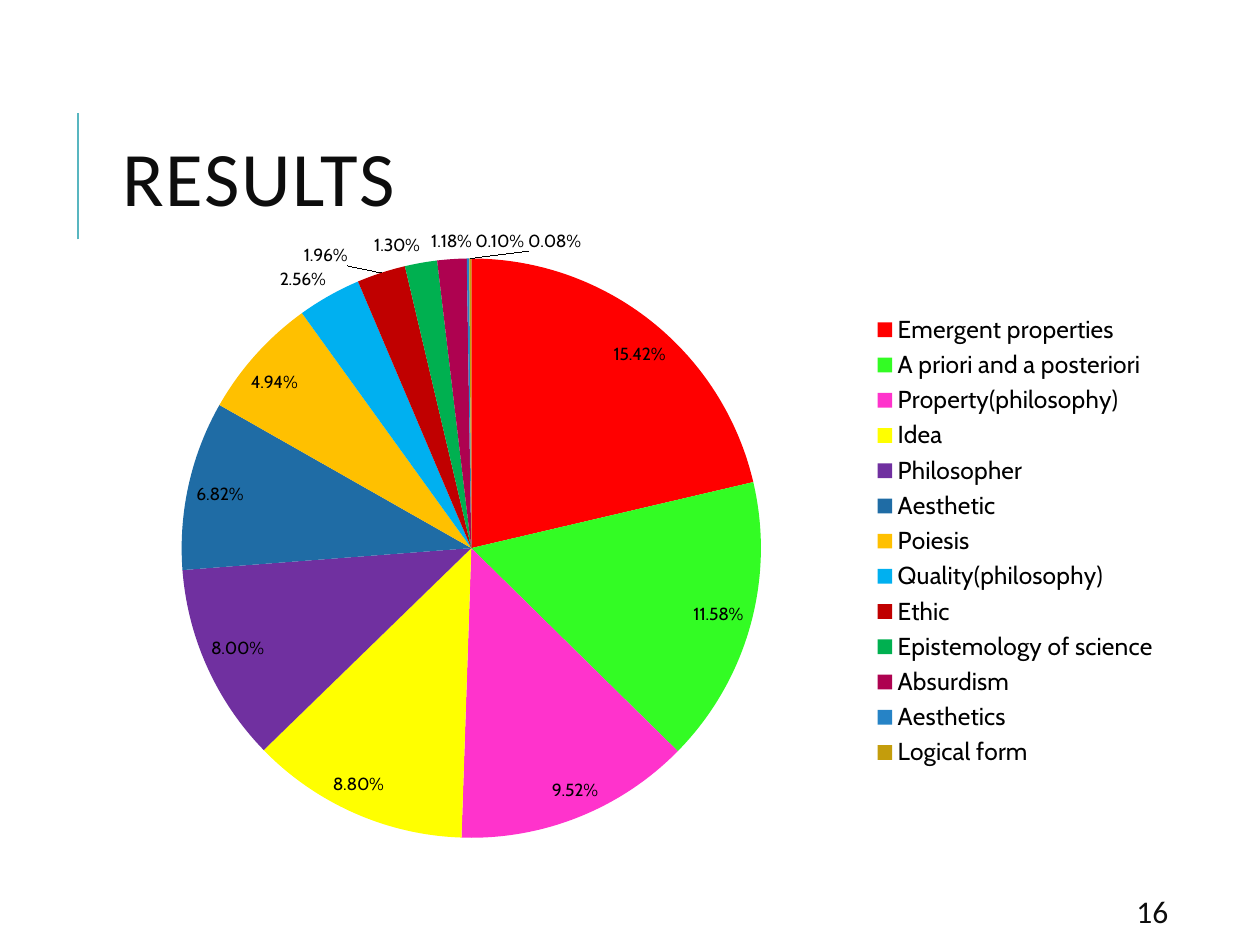
from lxml import etree
from pptx import Presentation
from pptx.chart.data import CategoryChartData
from pptx.dml.color import RGBColor
from pptx.enum.chart import XL_CHART_TYPE, XL_LABEL_POSITION, XL_LEGEND_POSITION
from pptx.enum.shapes import MSO_CONNECTOR
from pptx.enum.text import MSO_ANCHOR
from pptx.oxml.ns import qn
from pptx.util import Inches, Pt

PIE = XL_CHART_TYPE.PIE
BEST_FIT = XL_LABEL_POSITION.BEST_FIT
LEGEND_RIGHT = XL_LEGEND_POSITION.RIGHT
STRAIGHT = MSO_CONNECTOR.STRAIGHT
MIDDLE = MSO_ANCHOR.MIDDLE

SLICES = [
    ("Emergent properties", 0.1542, "FF0000"),
    ("A priori and a posteriori", 0.1158, "33FC24"),
    ("Property(philosophy)", 0.0952, "FF33CC"),
    ("Idea", 0.088, "FFFF00"),
    ("Philosopher", 0.08, "7030A0"),
    ("Aesthetic", 0.0682, "1F6CA5"),
    ("Poiesis", 0.0494, "FFC000"),
    ("Quality(philosophy)", 0.0256, "00B0F0"),
    ("Ethic", 0.0196, "C00000"),
    ("Epistemology of science", 0.013, "00B050"),
    ("Absurdism", 0.0118, "AE0250"),
    ("Aesthetics", 0.001, "2683C6"),
    ("Logical form", 0.0008, "C49D0C"),
]
LABEL_OFFSETS = {"Ethic": (-0.03, 0), "Aesthetics": (0.03, 0), "Logical form": (0.08, 0)}


def color(hex_string):
    """Return the colour for a hex string."""
    return RGBColor.from_string(hex_string)


def make_layout(**values):
    """Return a manual chart layout element."""
    layout = etree.Element(qn("c:layout"))
    manual = etree.SubElement(layout, qn("c:manualLayout"))
    for name, value in values.items():
        etree.SubElement(manual, qn(f"c:{name}")).set("val", str(value))
    return layout


def add_text(slide, box, text, size, letter_spacing=0, line_spacing=1.0):
    """Place one line of text, vertically centred in its box."""
    text_frame = slide.shapes.add_textbox(*map(Inches, box)).text_frame
    text_frame.text = text
    text_frame.word_wrap = True
    text_frame.vertical_anchor = MIDDLE
    text_frame.margin_left = text_frame.margin_right = Inches(0.13)
    text_frame.margin_top = text_frame.margin_bottom = Inches(0.07)
    paragraph = text_frame.paragraphs[0]
    paragraph.line_spacing = line_spacing
    run = paragraph.runs[0]
    run.font.name = "Calibri"
    run.font.size = Pt(size)
    run.font.color.rgb = color("0D0D0D")
    if letter_spacing:
        run.font._element.set("spc", str(letter_spacing * 100))


def add_accent_line(slide, x, top, height):
    """Draw the vertical accent beside the title."""
    line = slide.shapes.add_connector(
        STRAIGHT, Inches(x), Inches(top + height), Inches(x), Inches(top)
    )
    line.line.color.rgb = color("58B6C0")
    line.line.width = Pt(1.5)
    etree.SubElement(line._element.spPr, qn("a:effectLst"))


def format_font(font, size):
    """Apply the chart typeface, size and colour."""
    font.name = "Cabin"
    font.size = Pt(size)
    font.color.rgb = color("000000")


def add_results_pie(slide, box):
    """Place the pie chart with its labels and legend."""
    chart_data = CategoryChartData(number_format="0.00%")
    chart_data.categories = [name for name, _, _ in SLICES]
    chart_data.add_series("Series 1", [value for _, value, _ in SLICES])
    chart = slide.shapes.add_chart(PIE, *map(Inches, box), chart_data).chart
    chart.has_title = False
    format_font(chart.font, 10)
    chart.has_legend = True
    chart.legend.position = LEGEND_RIGHT
    chart.legend.include_in_layout = False
    format_font(chart.legend.font, 14)

    plot = chart.plots[0]
    plot.vary_by_categories = True
    series = plot.series[0]
    labels = series.data_labels
    labels.show_value = True
    labels.number_format = "0.00%"
    labels.number_format_is_linked = False
    labels.position = BEST_FIT
    format_font(labels.font, 10)
    for index, (name, _, fill_color) in enumerate(SLICES):
        point = series.points[index]
        point.format.fill.solid()
        point.format.fill.fore_color.rgb = color(fill_color)
        if name in LABEL_OFFSETS:
            label = point.data_label
            format_font(label.font, 10)
            label.position = BEST_FIT
            x, y = LABEL_OFFSETS[name]
            element = labels._element.xpath(f"c:dLbl[c:idx/@val='{index}']")[0]
            element.insert(1, make_layout(x=x, y=y))

    plot_area = chart._chartSpace.chart.plotArea
    for layout in plot_area.findall(qn("c:layout")):
        plot_area.remove(layout)
    plot_area.insert(0, make_layout(
        layoutTarget="inner", xMode="edge", yMode="edge", x=0.06, y=0.1, w=0.55, h=0.82
    ))


def main():
    """Build and save the results slide."""
    presentation = Presentation()
    presentation.slide_width = Inches(10)
    presentation.slide_height = Inches(7.5)
    slide = presentation.slides.add_slide(presentation.slide_layouts[6])
    add_accent_line(slide, 0.62, 0.9, 1)
    add_text(slide, (0.84, 0.64, 7.97, 1.64), "RESULTS", 44, 1, 0.8)
    add_text(slide, (8.89, 7.08, 0.8, 0.3), "16", 18)
    add_results_pie(slide, (0.94, 1.48, 8.36, 5.63))
    presentation.save("out.pptx")


if __name__ == "__main__":
    main()
